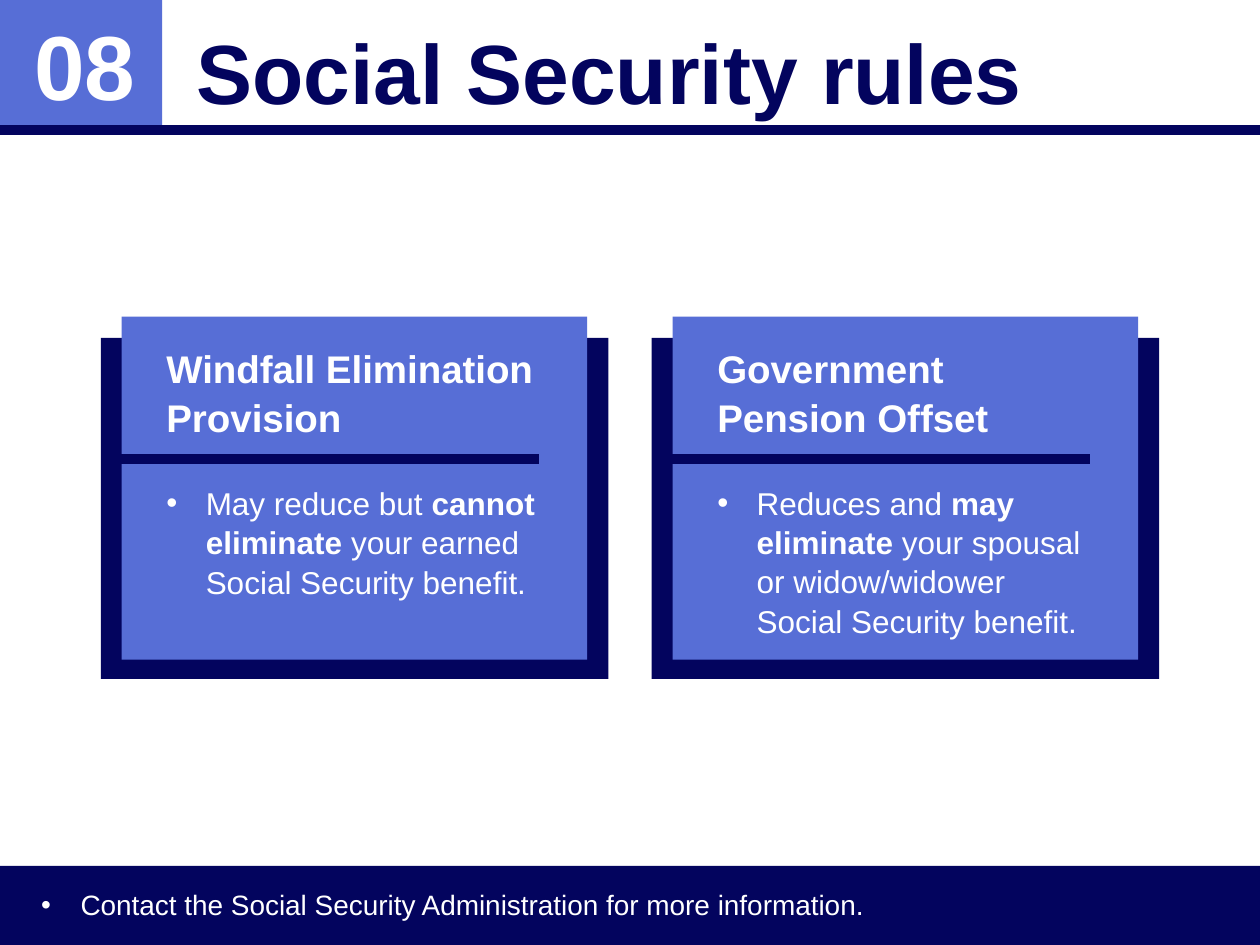
from dataclasses import dataclass

from lxml import etree
from pptx import Presentation
from pptx import util as u
from pptx.dml.color import RGBColor
from pptx.enum import shapes, text
from pptx.oxml import ns

COLORS = {"navy": "03045E", "blue": "576ED6", "white": "FFFFFF"}
FONT = "Arial"
SLIDE_WIDTH, SLIDE_HEIGHT = 720, 540
HEADER_BOTTOM = 74.16
CARD_LEFT, CARD_PITCH = 57.6, 314.8


@dataclass(frozen=True)
class Span:
    words: str
    bold: bool = False


@dataclass(frozen=True)
class RuleCard:
    heading: str
    effect: tuple[Span, ...]
    text_height: float


RULES = (
    RuleCard("Windfall Elimination Provision",
             (Span("May reduce but "), Span("cannot eliminate", True),
              Span(" your earned Social Security benefit.")), 150.5),
    RuleCard("Government Pension Offset",
             (Span("Reduces and "), Span("may eliminate", True),
              Span(" your spousal or widow/widower Social Security benefit.")), 172),
)


def rgb(name: str) -> RGBColor:
    return RGBColor.from_string(COLORS[name])


def add_panel(slide, left: float, top: float, width: float, height: float, color: str) -> None:
    panel = slide.shapes.add_shape(shapes.MSO_SHAPE.RECTANGLE, u.Pt(left), u.Pt(top),
                                   u.Pt(width), u.Pt(height))
    panel.shadow.inherit = False
    panel.fill.solid()
    panel.fill.fore_color.rgb = rgb(color)
    panel.line.fill.background()


def add_divider(slide, left: float, right: float, y: float) -> None:
    divider = slide.shapes.add_connector(shapes.MSO_CONNECTOR.STRAIGHT, u.Pt(left), u.Pt(y),
                                         u.Pt(right), u.Pt(y))
    divider.line.color.rgb = rgb("navy")
    divider.line.width = u.Pt(6)
    etree.SubElement(divider.element.spPr, ns.qn("a:effectLst"))


def add_frame(slide, left: float, top: float, width: float, height: float,
              anchor=text.MSO_ANCHOR.TOP):
    frame = slide.shapes.add_textbox(u.Pt(left), u.Pt(top), u.Pt(width), u.Pt(height)).text_frame
    frame.word_wrap = True
    frame.vertical_anchor = anchor
    return frame


def add_spans(paragraph, spans: tuple[Span, ...], size: float, color: str = "white") -> None:
    for span in spans:
        run = paragraph.add_run()
        run.text = span.words
        run.font.name = FONT
        run.font.size = u.Pt(size)
        run.font.bold = span.bold
        run.font.color.rgb = rgb(color)


def add_bullet(paragraph) -> None:
    properties = paragraph._p.get_or_add_pPr()
    indent = u.Pt(22.5)
    properties.set("marL", str(indent))
    properties.set("indent", str(-indent))
    etree.SubElement(properties, ns.qn("a:buFont"), typeface=FONT)
    etree.SubElement(properties, ns.qn("a:buChar"), char="•")


def add_card(slide, card: RuleCard, left: float) -> None:
    # Backing panel and raised front panel
    add_panel(slide, left, 193, 290, 195, "navy")
    add_panel(slide, left + 12, 181, 266, 196, "blue")

    # Heading and its effect
    frame = add_frame(slide, left + 30.4, 192.24, 226, card.text_height)
    heading = frame.paragraphs[0]
    heading.line_spacing = 1.06
    heading.space_after = u.Pt(24)
    add_spans(heading, (Span(card.heading, True),), 22)
    effect = frame.add_paragraph()
    add_bullet(effect)
    effect.line_spacing = 1.04
    add_spans(effect, card.effect, 18)

    add_divider(slide, left + 11.6, left + 250.2, 262.2)


def main() -> None:
    deck = Presentation()
    deck.slide_width, deck.slide_height = u.Pt(SLIDE_WIDTH), u.Pt(SLIDE_HEIGHT)
    slide = deck.slides.add_slide(deck.slide_layouts[6])

    # Header and footer bands
    add_panel(slide, 0, 0, 92.7, HEADER_BOTTOM, "blue")
    add_divider(slide, 0, SLIDE_WIDTH, HEADER_BOTTOM)
    add_panel(slide, 0, 494.8, SLIDE_WIDTH, SLIDE_HEIGHT - 494.8, "navy")

    # Section number
    number = add_frame(slide, 12.2, 5.8, 72.7, 69, text.MSO_ANCHOR.MIDDLE).paragraphs[0]
    number.alignment = text.PP_ALIGN.CENTER
    number.line_spacing = 0.9
    add_spans(number, (Span("08", True),), 52)

    # Title, set slightly below the middle of its box
    title = add_frame(slide, 105.1, 0.7, 609, 73.4, text.MSO_ANCHOR.MIDDLE)
    title.margin_top = u.Pt(9.6)
    add_spans(title.paragraphs[0], (Span("Social Security rules", True),), 48, "navy")

    # Rule cards
    for index, card in enumerate(RULES):
        add_card(slide, card, CARD_LEFT + index * CARD_PITCH)

    # Footer note
    note = add_frame(slide, 16.4, 502.6, 690.5, 26.6).paragraphs[0]
    add_bullet(note)
    note.line_spacing = 1.06
    add_spans(note, (Span("Contact the Social Security Administration for more information."),), 16)

    deck.save("out.pptx")


if __name__ == "__main__":
    main()
